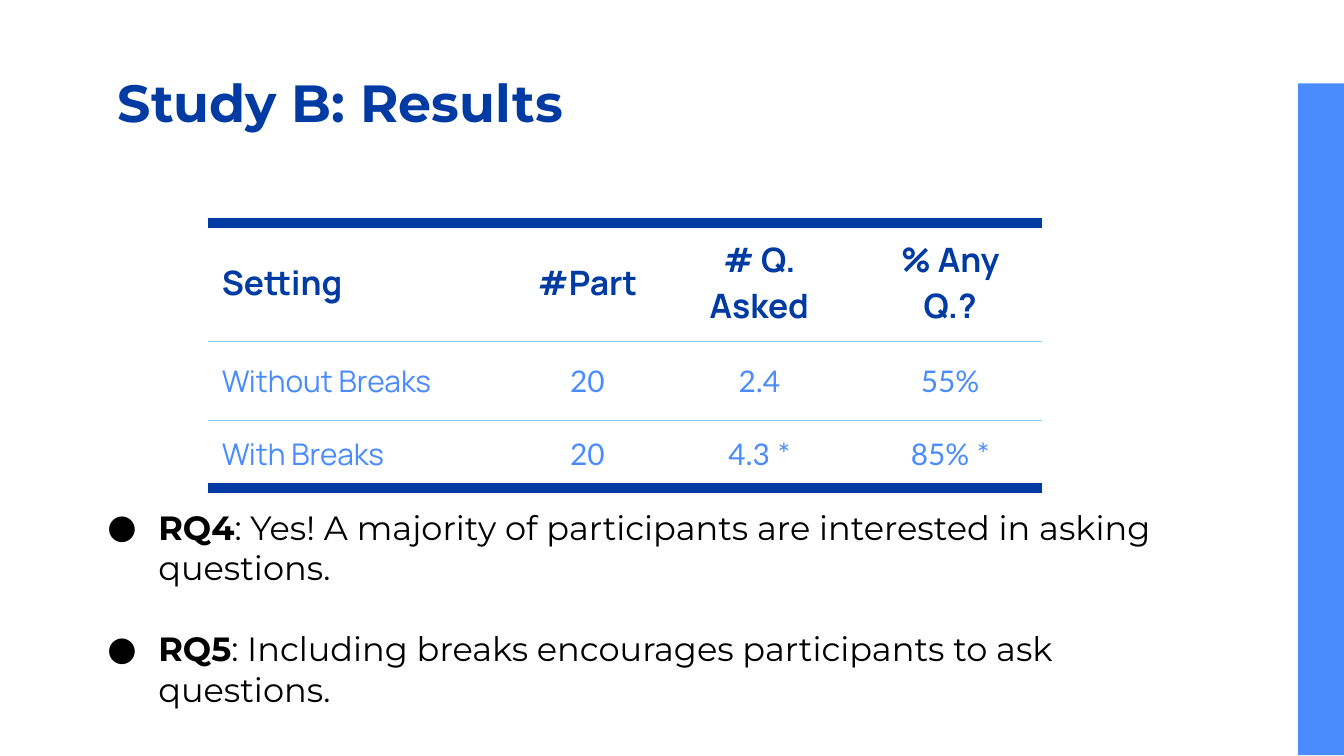
from lxml.etree import SubElement
from pptx import Presentation
from pptx.dml.color import RGBColor
from pptx.enum.shapes import MSO_SHAPE as Shape
from pptx.enum.text import MSO_ANCHOR as Anchor, PP_ALIGN as Align
from pptx.oxml.ns import qn
from pptx.util import Inches, Pt

NAVY, BLUE, SKY, BLACK = "003BA3", "4A8CFF", "7ECEFD", "000000"

TITLE = "Study B: Results"
TABLE = [
    ["Setting", "#Part", "# Q. Asked", "% Any Q.?"],
    ["Without Breaks", "20", "2.4", "55%"],
    ["With Breaks", "20", "4.3 *", "85% *"],
]
COLUMN_WIDTHS = [2.28, 1.08, 1.48, 1.36]
ROW_HEIGHTS = [0.88, 0.59, 0.5]
FINDINGS = [
    ("RQ4", ": Yes! A majority of participants are interested in asking questions."),
    ("RQ5", ": Including breaks encourages participants to ask questions."),
]

TITLE_FONT = {"name": "Montserrat", "size": Pt(28), "bold": True}
HEADER_FONT = {"name": "Manrope", "size": Pt(18), "bold": True}
LABEL_FONT = {"name": "Manrope", "size": Pt(16), "bold": False}
VALUE_FONT = {"name": "Lato", "size": Pt(16), "bold": False}
LEAD_FONT = {"name": "Montserrat", "size": Pt(18), "bold": True}
BODY_FONT = {"name": "Montserrat", "size": Pt(18), "bold": False}
THICK, THIN = (NAVY, 6), (SKY, 0.75)
MARGINS = dict.fromkeys(
    ("margin_left", "margin_top", "margin_right", "margin_bottom"), Inches(0.1))


def rgb(value):
    return RGBColor.from_string(value)


def set_attributes(target, values):
    for name, value in values.items():
        setattr(target, name, value)


def add_run(paragraph, text, font, color):
    run = paragraph.add_run()
    run.text = text
    set_attributes(run.font, font)
    run.font.color.rgb = rgb(color)


def add_text_box(slide, box):
    frame = slide.shapes.add_textbox(*map(Inches, box)).text_frame
    set_attributes(frame, MARGINS)
    set_attributes(frame, {"word_wrap": True, "vertical_anchor": Anchor.TOP})
    return frame


def set_borders(cell, top, bottom):
    properties = cell._tc.get_or_add_tcPr()
    borders = {"a:lnL": None, "a:lnR": None, "a:lnT": top, "a:lnB": bottom}
    for position, (tag, border) in enumerate(borders.items()):
        line = properties.makeelement(qn(tag))
        properties.insert(position, line)
        if border is None:
            SubElement(line, qn("a:noFill"))
            continue
        color, width = border
        line.set("w", str(Pt(width)))
        fill = SubElement(line, qn("a:solidFill"))
        SubElement(fill, qn("a:srgbClr"), val=color)


def add_bullet(paragraph):
    properties = paragraph._p.get_or_add_pPr()
    properties.set("marL", str(Inches(0.5)))
    properties.set("indent", str(Inches(-0.38)))
    color = SubElement(properties, qn("a:buClr"))
    SubElement(color, qn("a:srgbClr"), val=BLACK)
    SubElement(properties, qn("a:buSzPts"), val="1800")
    SubElement(properties, qn("a:buFont"), typeface="Montserrat")
    SubElement(properties, qn("a:buChar"), char="●")


def add_results_table(slide):
    frame = slide.shapes.add_table(
        len(TABLE), len(COLUMN_WIDTHS), Inches(1.55), Inches(1.66),
        Inches(sum(COLUMN_WIDTHS)), Inches(sum(ROW_HEIGHTS)))
    table = frame.table
    set_attributes(table, {"first_row": False, "horz_banding": False})
    for column, width in zip(table.columns, COLUMN_WIDTHS):
        column.width = Inches(width)
    for row, height in zip(table.rows, ROW_HEIGHTS):
        row.height = Inches(height)
    edges = [THICK] + [THIN] * (len(TABLE) - 1) + [THICK]
    for i, texts in enumerate(TABLE):
        for j, text in enumerate(texts):
            cell = table.cell(i, j)
            set_attributes(cell, MARGINS)
            cell.vertical_anchor = Anchor.MIDDLE
            cell.fill.background()
            set_borders(cell, edges[i], edges[i + 1])
            paragraph = cell.text_frame.paragraphs[0]
            paragraph.alignment = Align.CENTER if j else Align.LEFT
            body_font = VALUE_FONT if j else LABEL_FONT
            add_run(paragraph, text, body_font if i else HEADER_FONT, BLUE if i else NAVY)


def main():
    presentation = Presentation()
    width = Inches(10)
    set_attributes(presentation, {"slide_width": width, "slide_height": width * 9 // 16})
    slide = presentation.slides.add_slide(presentation.slide_layouts[6])

    bar = slide.shapes.add_shape(Shape.RECTANGLE, *map(Inches, (9.66, 0.62, 0.34, 5)))
    bar.shadow.inherit = False
    bar.fill.solid()
    bar.fill.fore_color.rgb = rgb(BLUE)
    bar.line.fill.background()

    title = add_text_box(slide, (0.78, 0.42, 8.43, 0.71))
    add_run(title.paragraphs[0], TITLE, TITLE_FONT, NAVY)

    add_results_table(slide)

    findings = add_text_box(slide, (0.58, 3.67, 8.37, 1.72))
    for i, (lead, body) in enumerate(FINDINGS):
        paragraph = findings.add_paragraph() if i else findings.paragraphs[0]
        paragraph.space_before = Pt(22 if i else 0)
        add_bullet(paragraph)
        add_run(paragraph, lead, LEAD_FONT, BLACK)
        add_run(paragraph, body, BODY_FONT, BLACK)

    presentation.save("out.pptx")


if __name__ == "__main__":
    main()
